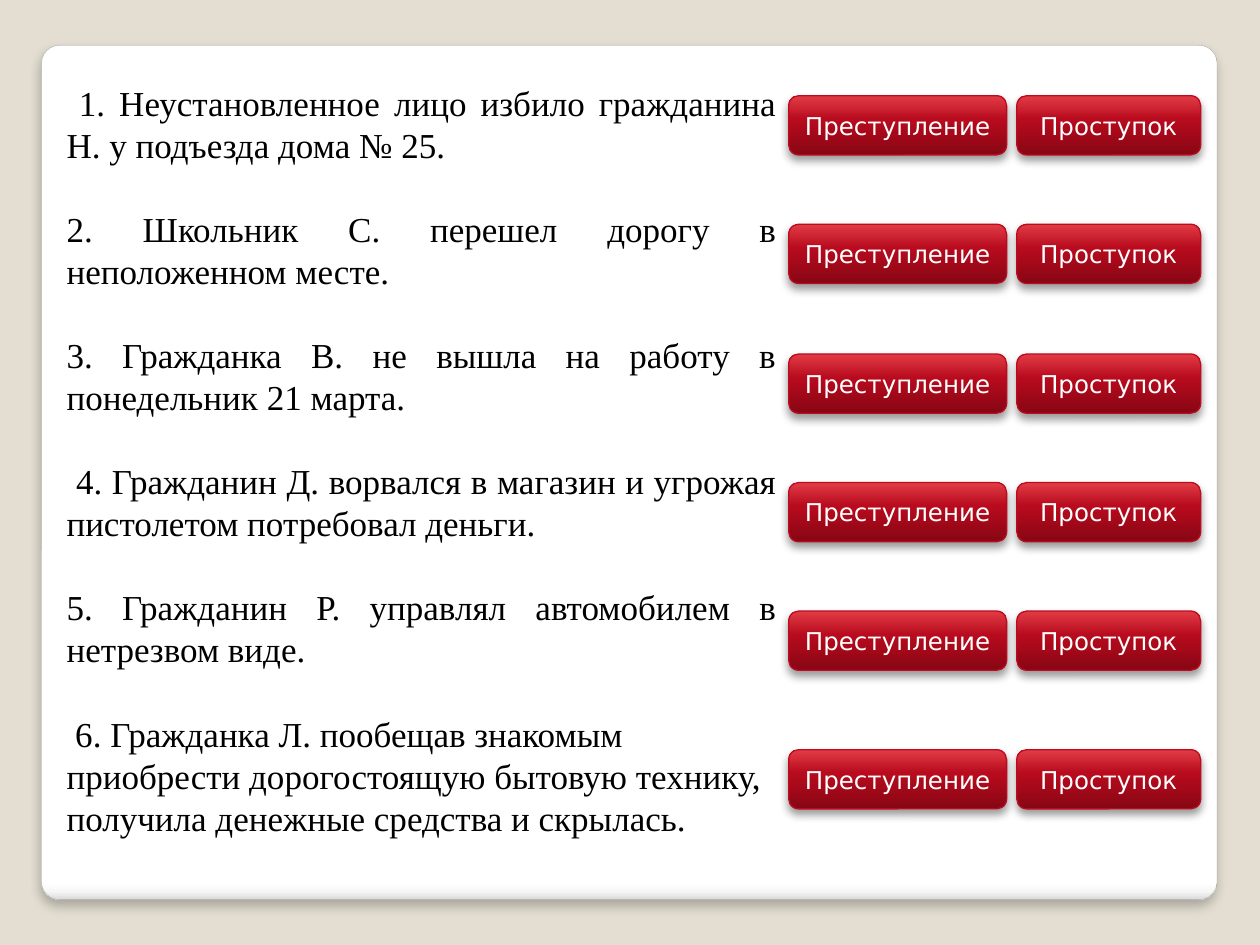
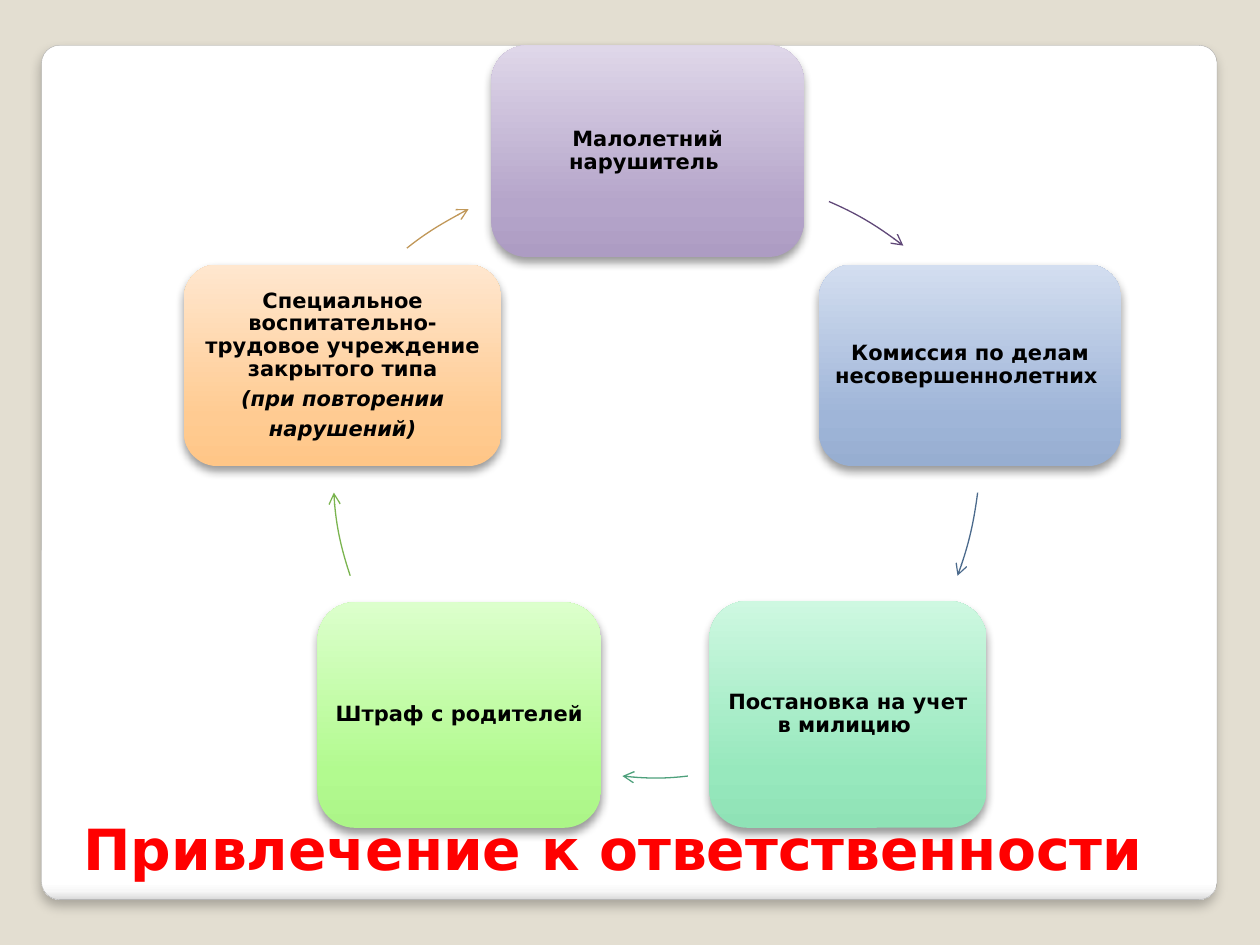
import pptx
import pptx.dml.color
import pptx.enum.shapes
import pptx.enum.text
import pptx.oxml.ns
import pptx.util
from lxml import etree

Inches = pptx.util.Inches
Pt = pptx.util.Pt
qn = pptx.oxml.ns.qn
ALIGN = pptx.enum.text.PP_ALIGN
ANCHOR = pptx.enum.text.MSO_ANCHOR

SANS, SERIF = "DejaVu Sans", "Times New Roman"
BACKGROUND, BLACK, WHITE, TITLE_RED = "E3DED1", "000000", "FFFFFF", "FF0000"
PANEL_STOPS = [(0, WHITE), (98, WHITE), (99, "F7F7F7"), (100, "DADADA")]
BUTTON_STOPS = [(0, "870614"), (60, "B80B1E"), (100, "E13C45")]
BUTTON_LINE = "BC0B1F"

CASES = [
    "1. Неустановленное лицо избило гражданина Н. у подъезда дома № 25. ",
    "2. Школьник С. перешел дорогу в неположенном месте.",
    "3. Гражданка В. не вышла на работу в понедельник 21 марта.",
    " 4. Гражданин Д. ворвался в магазин и угрожая пистолетом потребовал деньги. ",
    "5. Гражданин Р. управлял автомобилем в нетрезвом виде.",
    " 6. Гражданка Л. пообещав знакомым приобрести дорогостоящую бытовую технику, "
    "получила денежные средства и скрылась.",
]
ANSWERS = [("Преступление", 0, 1.73), ("Проступок", 1.81, 1.46)]  # text, left, width
ANSWER_TOPS = [0, 1.02, 2.05, 3.07, 4.09, 5.19]

# Each step: box, gradient colours at 0, 25 and 100 %, paragraphs, then for the arrow
# that leaves it the colour, the corner of its circle and four control points
CIRCLE_SIZE = 5.26
STEPS = [
    ((2.44, 0, 2.48, 1.68), ("AD9CC3", "B5A5CA", "DFD7E9"), ["Малолетний нарушитель "],
     "604878", (1.45, 1.03), [(5.12, 1.24), (5.33, 1.33), (5.53, 1.45), (5.71, 1.59)]),
    ((5.04, 1.74, 2.4, 1.6), ("97AED1", "9FB5D8", "D3DEF0"),
     ["Комиссия по делам несовершеннолетних "],
     "4B6A8C", (1.05, 0.64), [(6.3, 3.55), (6.27, 3.78), (6.22, 4), (6.14, 4.21)]),
    ((4.17, 4.41, 2.2, 1.8), ("8FE2B6", "97E8BD", "CEF8E1"), ["Постановка на учет в милицию "],
     "4DA07B", (1.1, 0.55), [(4, 5.8), (3.83, 5.82), (3.65, 5.82), (3.48, 5.8)]),
    ((1.06, 4.42, 2.25, 1.79), ("ACF588", "B2FA8F", "DCFFCC"), ["Штраф с родителей"],
     "7AB44F", (1.18, 0.72), [(1.32, 4.21), (1.25, 4), (1.2, 3.78), (1.19, 3.55)]),
    ((0, 1.74, 2.52, 1.6), ("FFC687", "FFCB92", "FFE7CF"),
     ["Специальное воспитательно-трудовое учреждение закрытого типа",
      "(при повторении", "нарушений)"],
     "C19859", (0.77, 1.05), [(1.77, 1.61), (1.92, 1.49), (2.09, 1.39), (2.26, 1.3)]),
]


def color(value):
    return pptx.dml.color.RGBColor.from_string(value)


def add_color_node(parent, value):
    return etree.SubElement(parent, qn("a:srgbClr"), val=value)


def set_gradient(shape, stops, angle):
    """Fill with any number of (percent, colour) stops; angle is anticlockwise."""
    shape.fill.gradient()
    shape.fill.gradient_angle = angle
    stop_list = shape._element.spPr.find(qn("a:gradFill")).find(qn("a:gsLst"))
    for stop in list(stop_list):
        stop_list.remove(stop)
    for percent, value in stops:
        add_color_node(etree.SubElement(stop_list, qn("a:gs"), pos=str(percent * 1000)), value)


def set_shadow(shape, opacity, blur, distance):
    shape.shadow.inherit = False
    effects = shape._element.spPr.find(qn("a:effectLst"))
    shadow = etree.SubElement(effects, qn("a:outerShdw"), blurRad=str(Pt(blur)),
                              dist=str(Pt(distance)), dir="5400000", rotWithShape="0")
    etree.SubElement(add_color_node(shadow, BLACK), qn("a:alpha"), val=str(opacity * 1000))


def add_round_box(page, box, stops, angle=90, line=None, line_width=0.75, shadow=(40, 5.2, 3)):
    shape = page.shapes.add_shape(pptx.enum.shapes.MSO_SHAPE.ROUNDED_RECTANGLE, *map(Inches, box))
    set_gradient(shape, stops, angle)
    if line:
        shape.line.color.rgb = color(line)
        shape.line.width = Pt(line_width)
    else:
        shape.line.fill.background()
    set_shadow(shape, *shadow)
    return shape


def set_frame(shape, anchor, inset=0.05):
    frame = shape.text_frame
    frame.word_wrap = True
    frame.vertical_anchor = anchor
    frame.margin_left = frame.margin_right = Inches(inset)
    frame.margin_top = frame.margin_bottom = Inches(0.05)
    return frame


def add_para(frame, index, align):
    para = frame.add_paragraph() if index else frame.paragraphs[0]
    para.alignment = align
    return para


def add_span(para, text, size, font=SANS, value=BLACK, bold=False, italic=False):
    span = para.add_run()
    span.text = text
    span.font.size = Pt(size)
    span.font.name = font
    span.font.color.rgb = color(value)
    span.font.bold = bold
    span.font.italic = italic


def add_page(deck):
    """A blank page with the shared background and white panel."""
    page = deck.slides.add_slide(deck.slide_layouts[6])
    page.background.fill.solid()
    page.background.fill.fore_color.rgb = color(BACKGROUND)
    panel = add_round_box(page, (0.33, 0.36, 9.33, 6.78), PANEL_STOPS, 270,
                          "A4A4A4", 0.16, (25, 6, 4))
    panel.adjustments[0] = 0.021
    return page


def add_cases(page, box):
    frame = set_frame(page.shapes.add_textbox(*map(Inches, box)), ANCHOR.TOP, 0.1)
    for index, case in enumerate(CASES):
        last = index == len(CASES) - 1
        para = add_para(frame, index, ALIGN.LEFT if last else ALIGN.JUSTIFY)
        if index:
            para.space_before = Pt(24)
        else:
            add_span(para, " ", 16, SERIF)
        add_span(para, case, 20, SERIF)


def add_answers(page, box):
    left, top, height = box
    for row_top in ANSWER_TOPS:
        for text, offset, width in ANSWERS:
            button = add_round_box(page, (left + offset, top + row_top, width, height),
                                   BUTTON_STOPS, line=BUTTON_LINE)
            para = add_para(set_frame(button, ANCHOR.MIDDLE), 0, ALIGN.CENTER)
            add_span(para, text, 14, value=WHITE)


def add_title(page, box, text):
    frame = set_frame(page.shapes.add_textbox(*map(Inches, box)), ANCHOR.BOTTOM, 0.1)
    add_span(add_para(frame, 0, ALIGN.CENTER), text, 32.4, value=TITLE_RED, bold=True)


def add_curved_arrow(page, origin, corner, controls, value):
    """A cubic curve whose frame is the whole circle it runs along."""
    points = [(Inches(x - corner[0]), Inches(y - corner[1])) for x, y in controls]
    builder = page.shapes.build_freeform(*points[0])
    builder.add_line_segments(points[1:], close=False)
    arrow = builder.convert_to_shape()
    arrow.left, arrow.top = Inches(origin[0] + corner[0]), Inches(origin[1] + corner[1])
    arrow.width = arrow.height = Inches(CIRCLE_SIZE)

    # Turn the straight segments into one curve
    outline = next(arrow._element.iter(qn("a:path")))
    for part in list(outline):
        outline.remove(part)
    outline.set("w", str(arrow.width))
    outline.set("h", str(arrow.height))
    for tag, ends in (("a:moveTo", points[:1]), ("a:cubicBezTo", points[1:])):
        part = etree.SubElement(outline, qn(tag))
        for x, y in ends:
            etree.SubElement(part, qn("a:pt"), x=str(x), y=str(y))

    arrow.shadow.inherit = False
    arrow.fill.background()
    arrow.line.color.rgb = color(value)
    arrow.line.width = Pt(0.75)
    etree.SubElement(arrow.line._get_or_add_ln(), qn("a:tailEnd"), type="arrow")


def add_cycle(page, origin):
    left, top = origin
    for (x, y, width, height), shades, lines, arrow_color, corner, controls in STEPS:
        step = add_round_box(page, (left + x, top + y, width, height),
                             list(zip((0, 25, 100), shades)))
        frame = set_frame(step, ANCHOR.MIDDLE)
        for index, text in enumerate(lines):
            para = add_para(frame, index, ALIGN.CENTER)
            para.line_spacing = 0.9
            para.space_after = Pt(4.2)
            add_span(para, text, 12, bold=True, italic=index > 0)
        add_curved_arrow(page, origin, corner, controls, arrow_color)


def main():
    deck = pptx.Presentation()
    deck.slide_width, deck.slide_height = Inches(10), Inches(7.5)

    # Cases to sort into crimes and misdemeanours
    page = add_page(deck)
    add_cases(page, (0.43, 0.6, 5.83, 6.16))
    add_answers(page, (6.26, 0.76, 0.47))

    # Cycle of liability
    page = add_page(deck)
    add_title(page, (0.47, 6.25, 8.95, 0.8), "Привлечение к ответственности ")
    add_cycle(page, (1.46, 0.36))

    deck.save("out.pptx")


if __name__ == "__main__":
    main()
